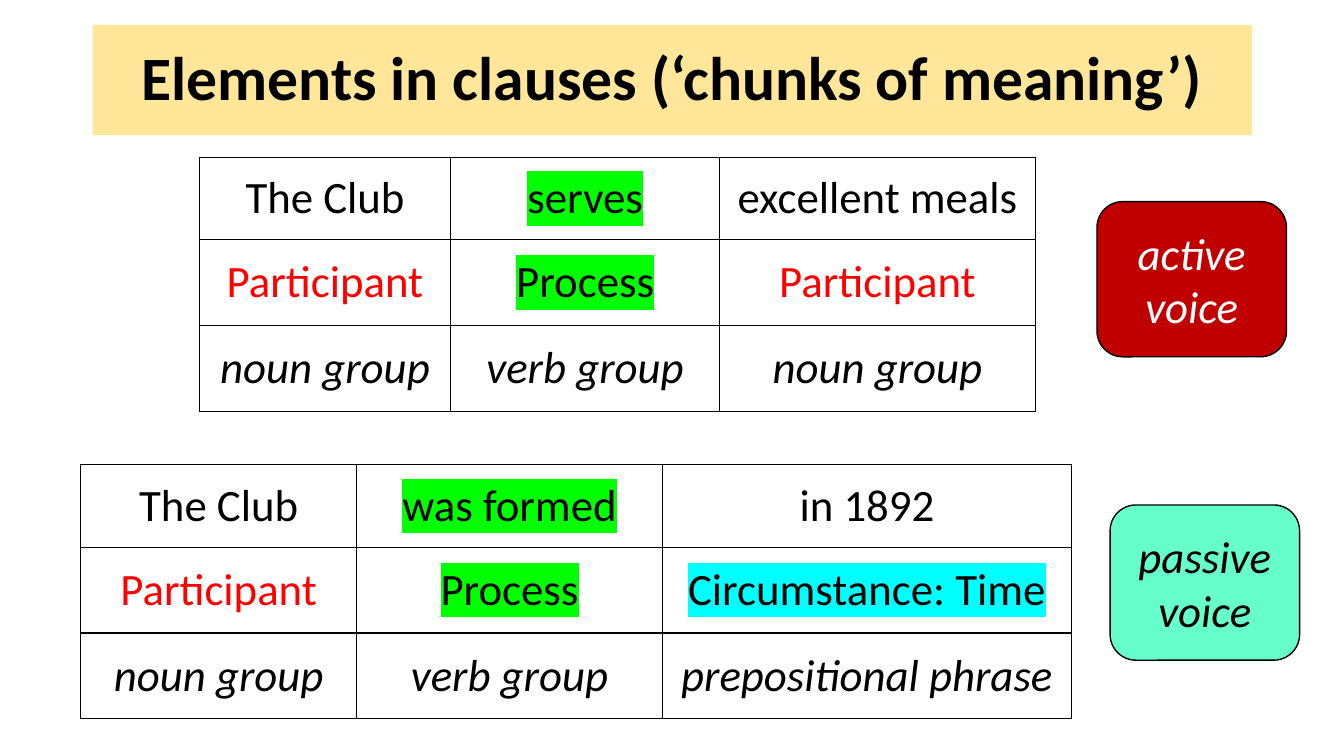
"""Build a slide on the elements of clauses in active and passive voice."""
from dataclasses import dataclass

from lxml import etree
from pptx import Presentation
from pptx.dml.color import RGBColor
from pptx.enum.shapes import MSO_SHAPE
from pptx.enum.text import MSO_ANCHOR, MSO_AUTO_SIZE, PP_ALIGN
from pptx.oxml.ns import qn
from pptx.slide import Slide
from pptx.table import _Cell
from pptx.text.text import TextFrame
from pptx.util import Inches, Pt

ROUND = MSO_SHAPE.ROUNDED_RECTANGLE
MIDDLE = MSO_ANCHOR.MIDDLE
CENTER = PP_ALIGN.CENTER
NO_FIT = MSO_AUTO_SIZE.NONE

BLACK, WHITE, RED = "000000", "FFFFFF", "FF0000"
GREEN, CYAN = "00FF00", "00FFFF"
MARKS = {"serves": GREEN, "was formed": GREEN, "Process": GREEN,
         "Circumstance: Time": CYAN}
HEIGHTS = (0.82, 0.85, 0.85)


@dataclass
class Clause:
    """A clause table: wording, roles and word groups."""
    left: float
    top: float
    widths: tuple[float, ...]
    rows: tuple[tuple[str, ...], ...]


@dataclass
class Voice:
    """A rounded label that names the voice."""
    left: float
    top: float
    text: str
    fill: str
    ink: str


CLAUSES = (
    Clause(1.98, 1.56, (2.49, 2.67, 3.13), (
        ("The Club", "serves", "excellent meals"),
        ("Participant", "Process", "Participant"),
        ("noun group", "verb group", "noun group"))),
    Clause(0.8, 4.61, (2.74, 3.03, 4.06), (
        ("The Club", "was formed", "in 1892"),
        ("Participant", "Process", "Circumstance: Time"),
        ("noun group", "verb group", "prepositional phrase"))),
)
VOICES = (
    Voice(10.88, 2, "active voice", "C00000", WHITE),
    Voice(11.01, 5.01, "passive voice", "66FFCC", BLACK),
)


def color(code: str) -> RGBColor:
    """Turn a hex string into a colour."""
    return RGBColor.from_string(code)


def write(frame: TextFrame, text: str, ink: str = BLACK, size: int = 32,
          bold: bool = False, slant: bool = False) -> None:
    """Put centred text in a frame and format its run."""
    frame.text = text
    line = frame.paragraphs[0]
    line.alignment = CENTER
    font = line.runs[0].font
    font.name, font.size = "Calibri", Pt(size)
    font.bold, font.italic = bold, slant
    font.color.rgb = color(ink)


def mark(frame: TextFrame, code: str) -> None:
    """Highlight the run in a frame."""
    latin = frame.paragraphs[0].runs[0].font._element.find(qn("a:latin"))
    light = etree.Element(qn("a:highlight"))
    etree.SubElement(light, qn("a:srgbClr"), val=code)
    latin.addprevious(light)


def border(cell: _Cell) -> None:
    """Draw a thin black line on each side of a cell."""
    props = cell._tc.get_or_add_tcPr()
    for spot, side in enumerate(("lnL", "lnR", "lnT", "lnB")):
        line = etree.Element(qn(f"a:{side}"), w=str(Pt(1)))
        fill = etree.SubElement(line, qn("a:solidFill"))
        etree.SubElement(fill, qn("a:srgbClr"), val=BLACK)
        props.insert(spot, line)


def add_clause(slide: Slide, clause: Clause) -> None:
    """Add a clause table with its roles and groups."""
    table = slide.shapes.add_table(
        len(clause.rows), len(clause.widths),
        Inches(clause.left), Inches(clause.top),
        Inches(sum(clause.widths)), Inches(sum(HEIGHTS))).table
    table.first_row = table.horz_banding = False
    for col, width in zip(table.columns, clause.widths):
        col.width = Inches(width)
    for row, height in zip(table.rows, HEIGHTS):
        row.height = Inches(height)
    for r, words in enumerate(clause.rows):
        for c, text in enumerate(words):
            cell = table.cell(r, c)
            cell.vertical_anchor = MIDDLE
            cell.fill.solid()
            cell.fill.fore_color.rgb = color(WHITE)
            border(cell)
            ink = RED if text == "Participant" else BLACK
            write(cell.text_frame, text, ink, slant=r == 2)
            if text in MARKS:
                mark(cell.text_frame, MARKS[text])


def add_voice(slide: Slide, voice: Voice) -> None:
    """Add a rounded voice label."""
    shape = slide.shapes.add_shape(
        ROUND, Inches(voice.left), Inches(voice.top),
        Inches(1.88), Inches(1.54))
    shape.shadow.inherit = False
    shape.fill.solid()
    shape.fill.fore_color.rgb = color(voice.fill)
    shape.line.color.rgb = color(BLACK)
    shape.line.width = Pt(1)
    frame = shape.text_frame
    frame.word_wrap = True
    frame.vertical_anchor = MIDDLE
    write(frame, voice.text, voice.ink, slant=True)


def add_title(slide: Slide, text: str) -> None:
    """Place and format the title band."""
    title = slide.shapes.title
    title.left, title.top = Inches(0.92), Inches(0.25)
    title.width, title.height = Inches(11.5), Inches(1.09)
    title.fill.solid()
    title.fill.fore_color.rgb = color("FFE699")
    frame = title.text_frame
    frame.auto_size = NO_FIT
    frame.vertical_anchor = MIDDLE
    write(frame, text, size=44, bold=True)
    frame.paragraphs[0].line_spacing = 0.9


def main() -> None:
    """Build and save the slide."""
    deck = Presentation()
    deck.slide_width, deck.slide_height = Inches(13.33), Inches(7.5)
    slide = deck.slides.add_slide(deck.slide_layouts[5])
    add_title(slide, "Elements in clauses (‘chunks of meaning’)")
    for clause in CLAUSES:
        add_clause(slide, clause)
    for voice in VOICES:
        add_voice(slide, voice)
    deck.save("out.pptx")


if __name__ == "__main__":
    main()
